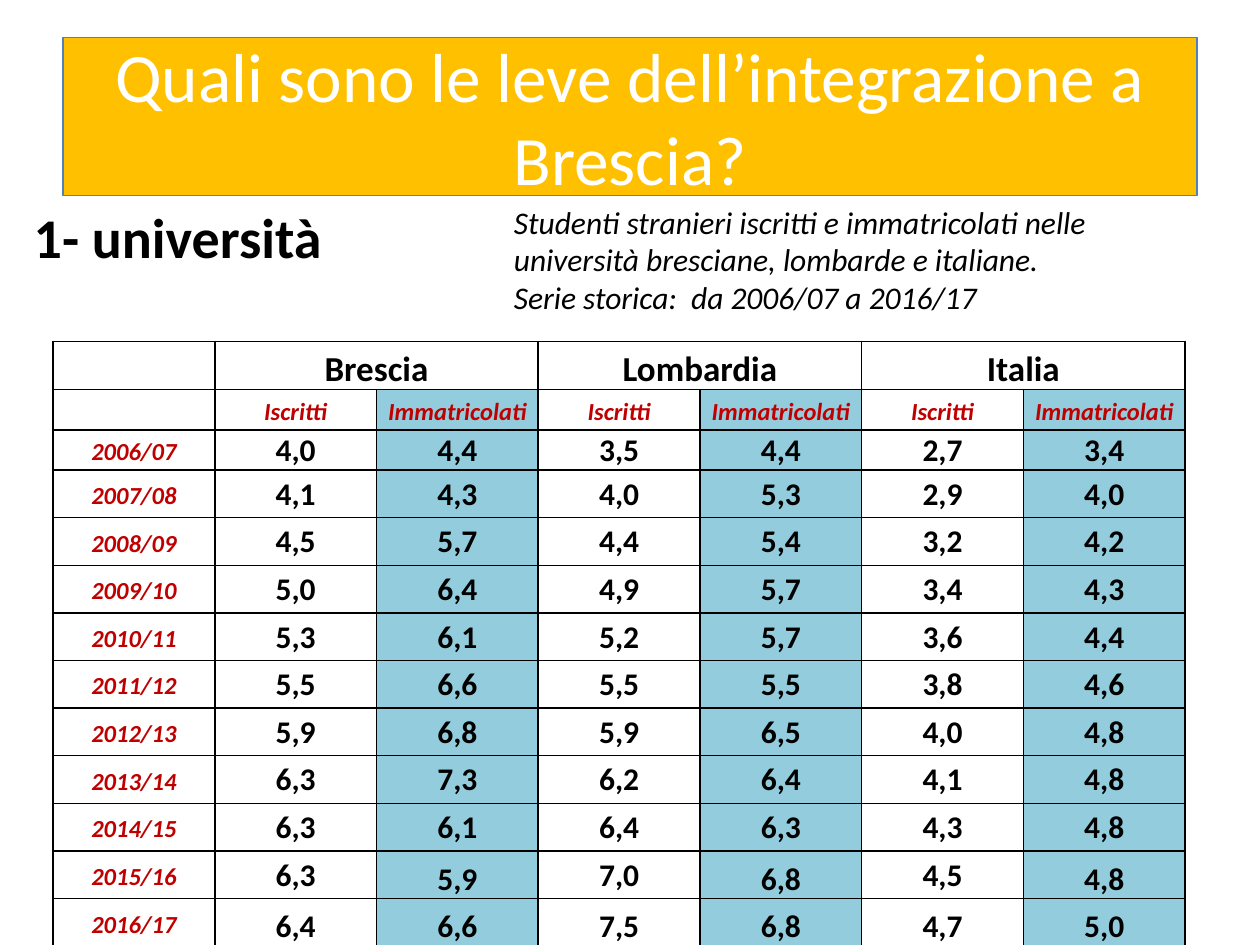
from lxml import etree
from pptx import Presentation
from pptx.dml.color import RGBColor
from pptx.enum.text import MSO_ANCHOR, MSO_AUTO_SIZE, PP_ALIGN
from pptx.oxml.ns import qn
from pptx.util import Cm, Pt

MIDDLE, BOTTOM = MSO_ANCHOR.MIDDLE, MSO_ANCHOR.BOTTOM
CENTER, LEFT = PP_ALIGN.CENTER, PP_ALIGN.LEFT
NO_AUTOFIT = MSO_AUTO_SIZE.NONE

BLACK = RGBColor(0x00, 0x00, 0x00)
WHITE = RGBColor(0xFF, 0xFF, 0xFF)
AMBER = RGBColor(0xFF, 0xC0, 0x00)
BLUE = RGBColor(0x4F, 0x81, 0xBD)
TEAL = RGBColor(0x93, 0xCD, 0xDD)
RED = RGBColor(0xC0, 0x00, 0x00)
FONT = "Calibri"

AREAS = ["Brescia", "Lombardia", "Italia"]
MEASURES = ["Iscritti", "Immatricolati"]
SERIES = [
    ("2006/07", "4,0 4,4 3,5 4,4 2,7 3,4"),
    ("2007/08", "4,1 4,3 4,0 5,3 2,9 4,0"),
    ("2008/09", "4,5 5,7 4,4 5,4 3,2 4,2"),
    ("2009/10", "5,0 6,4 4,9 5,7 3,4 4,3"),
    ("2010/11", "5,3 6,1 5,2 5,7 3,6 4,4"),
    ("2011/12", "5,5 6,6 5,5 5,5 3,8 4,6"),
    ("2012/13", "5,9 6,8 5,9 6,5 4,0 4,8"),
    ("2013/14", "6,3 7,3 6,2 6,4 4,1 4,8"),
    ("2014/15", "6,3 6,1 6,4 6,3 4,3 4,8"),
    ("2015/16", "6,3 5,9 7,0 6,8 4,5 4,8"),
    ("2016/17", "6,4 6,6 7,5 6,8 4,7 5,0"),
]
HEADER_ROWS = 2
COLUMN_WIDTH = Cm(3.26)
ROW_HEIGHT, SHORT_ROW_HEIGHT = Cm(0.96), Cm(0.81)
SHORT_ROWS = (1, 2)


def write(frame, text, size, color=BLACK, bold=False, italic=False,
          align=LEFT, line_spacing=None, space_before=None):
    """Fill the first paragraph; newlines become line breaks."""
    paragraph = frame.paragraphs[0]
    paragraph.alignment = align
    paragraph.line_spacing = line_spacing
    paragraph.space_before = space_before
    paragraph.font.size = Pt(size)
    for number, line in enumerate(text.split("\n")):
        if number:
            paragraph.add_line_break()
        run = paragraph.add_run()
        run.text = line
        font = run.font
        font.name, font.size = FONT, Pt(size)
        font.bold, font.italic = bold, italic
        font.color.rgb = color


def add_title(slide, text):
    title = slide.shapes.title
    title.left, title.top = Cm(1.27), Cm(0.76)
    title.width, title.height = Cm(22.86), Cm(3.18)
    title.fill.solid()
    title.fill.fore_color.rgb = AMBER
    title.line.color.rgb = BLUE
    title.line.width = Pt(0.75)
    frame = title.text_frame
    frame.auto_size = NO_AUTOFIT
    frame.vertical_anchor = MIDDLE
    write(frame, text, 39.6, color=WHITE, align=CENTER)


def add_text(slide, text, left, top, width, height, **text_format):
    frame = slide.shapes.add_textbox(left, top, width, height).text_frame
    frame.word_wrap = True
    write(frame, text, **text_format)


def add_borders(cell):
    properties = cell._tc.get_or_add_tcPr()
    for position, side in enumerate(("lnL", "lnR", "lnT", "lnB")):
        line = etree.Element(qn(f"a:{side}"), w=str(Pt(1)))
        fill = etree.SubElement(line, qn("a:solidFill"))
        etree.SubElement(fill, qn("a:srgbClr"), val=str(BLACK))
        properties.insert(position, line)


def format_cell(cell, shaded):
    if shaded:
        cell.fill.solid()
        cell.fill.fore_color.rgb = TEAL
    else:
        cell.fill.background()
    cell.margin_left = cell.margin_right = Cm(0.13)
    cell.margin_top = cell.margin_bottom = 0
    cell.vertical_anchor = MIDDLE
    cell.text_frame.paragraphs[0].font.size = Pt(14)
    add_borders(cell)


def write_label(cell, text, size=14, color=RED, italic=True):
    write(cell.text_frame, text, size, color=color, bold=True, italic=italic,
          align=CENTER, line_spacing=1.15)


def write_value(cell, text, anchor):
    cell.margin_left = cell.margin_right = cell.margin_top = Cm(0.02)
    cell.vertical_anchor = anchor
    write(cell.text_frame, text, 18, bold=True, align=CENTER)


def value_anchor(year_index, column):
    """The last year sits low, as do the shaded values of the year before."""
    years_left = len(SERIES) - 1 - year_index
    low = years_left == 0 or (years_left == 1 and column % 2 == 0)
    return BOTTOM if low else MIDDLE


def add_student_table(slide):
    rows = HEADER_ROWS + len(SERIES)
    columns = 1 + len(AREAS) * len(MEASURES)
    table = slide.shapes.add_table(
        rows, columns, Cm(1.07), Cm(6.88),
        COLUMN_WIDTH * columns, ROW_HEIGHT * rows).table
    table.first_row = table.horz_banding = False

    for column in table.columns:
        column.width = COLUMN_WIDTH
    for r, row in enumerate(table.rows):
        row.height = SHORT_ROW_HEIGHT if r in SHORT_ROWS else ROW_HEIGHT
        for c, cell in enumerate(row.cells):
            format_cell(cell, shaded=r > 0 and c > 0 and c % 2 == 0)

    for a, area in enumerate(AREAS):
        first = 1 + a * len(MEASURES)
        area_cell = table.cell(0, first)
        area_cell.merge(table.cell(0, first + len(MEASURES) - 1))
        write_label(area_cell, area, size=20, color=BLACK, italic=False)
        for m, measure in enumerate(MEASURES):
            write_label(table.cell(1, first + m), measure)

    for y, (year, values) in enumerate(SERIES):
        write_label(table.cell(HEADER_ROWS + y, 0), year)
        for c, value in enumerate(values.split(), start=1):
            write_value(table.cell(HEADER_ROWS + y, c), value, value_anchor(y, c))


def main():
    presentation = Presentation()
    presentation.slide_width, presentation.slide_height = Cm(25.4), Cm(19.05)
    slide = presentation.slides.add_slide(presentation.slide_layouts[5])
    add_title(slide, "Quali sono le leve dell’integrazione a Brescia?")
    add_text(slide, "1- università", Cm(0.43), Cm(3.96), Cm(24.05), Cm(14.38),
             size=32, bold=True, space_before=Pt(6.4))
    add_student_table(slide)
    add_text(slide, "Studenti stranieri iscritti e immatricolati nelle università "
             "bresciane, lombarde e italiane.\n"
             "Serie storica:  da 2006/07 a 2016/17",
             Cm(10.11), Cm(3.96), Cm(13.89), Cm(2.57), size=18, italic=True)
    presentation.save("out.pptx")


if __name__ == "__main__":
    main()
